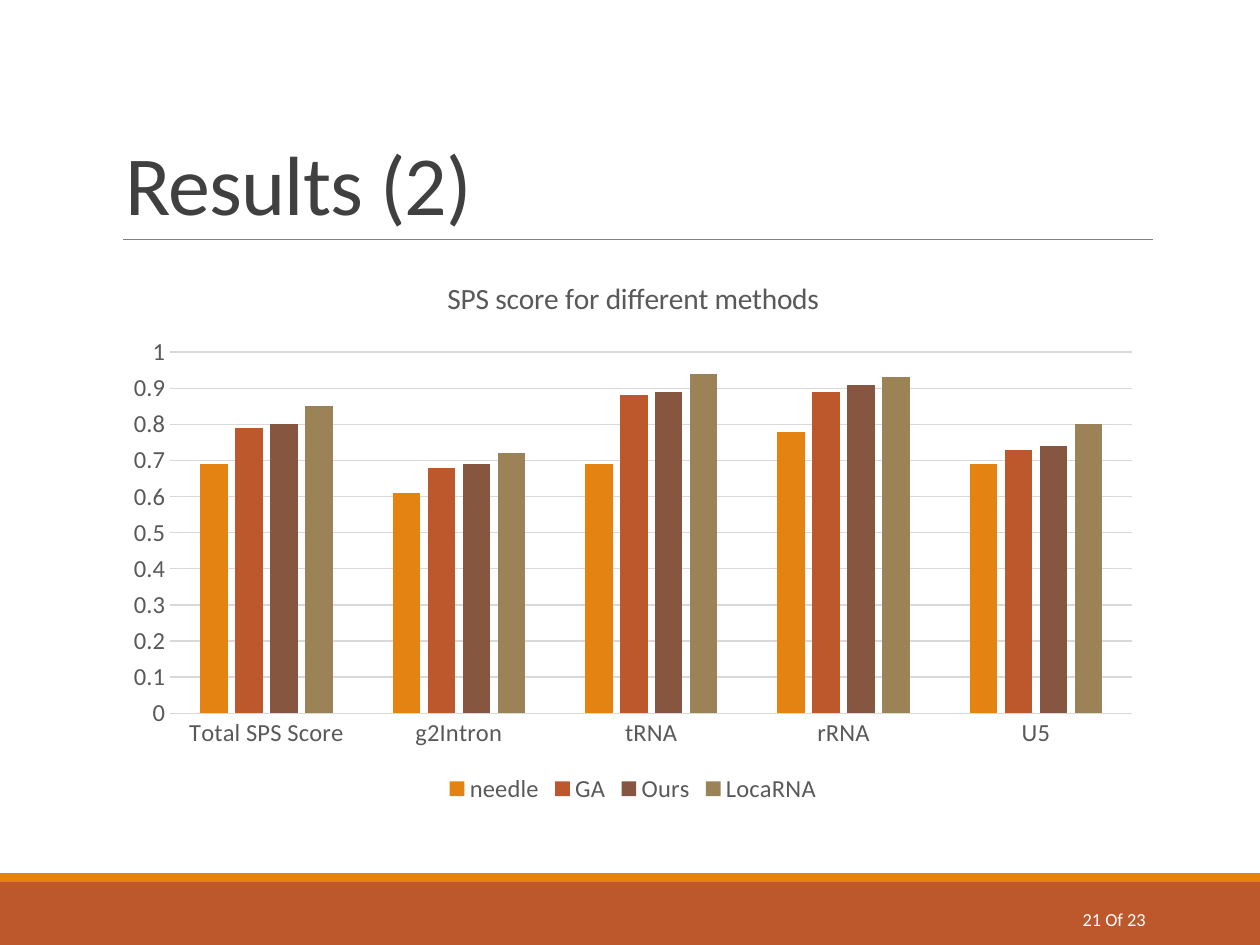
from dataclasses import dataclass, field

from lxml.etree import SubElement
from pptx import Presentation
from pptx.chart.data import CategoryChartData
from pptx.dml.color import RGBColor
from pptx.enum.chart import XL_CHART_TYPE, XL_LEGEND_POSITION, XL_TICK_MARK
from pptx.enum.shapes import MSO_CONNECTOR, MSO_SHAPE
from pptx.enum.text import MSO_ANCHOR, PP_ALIGN
from pptx.oxml.ns import qn
from pptx.util import Emu, Pt

PX_PER_INCH = 126
FONT = "Calibri"
COLORS = {
    "orange": "E48312",
    "rust": "BD582C",
    "brown": "865640",
    "khaki": "9B8357",
    "rule": "808080",
    "title": "404040",
    "label": "595959",
    "grid": "D9D9D9",
    "white": "FFFFFF",
}


@dataclass(frozen=True)
class Area:
    left: int
    top: int
    width: int
    height: int

    def emu(self) -> tuple:
        return tuple(px(n) for n in (self.left, self.top, self.width, self.height))


@dataclass(frozen=True)
class Band:
    area: Area
    color: str


@dataclass(frozen=True)
class Label:
    text: str
    area: Area
    size: float
    color: str
    tracking: int = 0
    frame_format: dict = field(default_factory=dict)
    para_format: dict = field(default_factory=dict)


@dataclass(frozen=True)
class Method:
    name: str
    color: str
    scores: tuple


BANDS = (
    Band(Area(0, 882, 1260, 63), "rust"),
    Band(Area(0, 873, 1260, 9), "orange"),
)
LABELS = (
    Label("21 Of 23", Area(1058, 902, 100, 35), 10.5, "white",
          frame_format={"vertical_anchor": MSO_ANCHOR.MIDDLE},
          para_format={"alignment": PP_ALIGN.RIGHT}),
    Label("Results (2)", Area(113, 39, 1040, 200), 48, "title", tracking=-50,
          frame_format={"vertical_anchor": MSO_ANCHOR.BOTTOM},
          para_format={"line_spacing": 0.85}),
)
CHART_AREA = Area(113, 255, 1040, 554)
CHART_TITLE = "SPS score for different methods"
FAMILIES = ("Total SPS Score", "g2Intron", "tRNA", "rRNA", "U5")
METHODS = (
    Method("needle", "orange", (0.69, 0.61, 0.69, 0.78, 0.69)),
    Method("GA", "rust", (0.79, 0.68, 0.88, 0.89, 0.73)),
    Method("Ours", "brown", (0.8, 0.69, 0.89, 0.91, 0.74)),
    Method("LocaRNA", "khaki", (0.85, 0.72, 0.94, 0.93, 0.8)),
)


def px(length: int) -> Emu:
    return Emu(round(length * 914400 / PX_PER_INCH))


def rgb(name: str) -> RGBColor:
    return RGBColor.from_string(COLORS[name])


def set_all(target, values: dict) -> None:
    for name, value in values.items():
        setattr(target, name, value)


def style_font(font, size: float, color: str) -> None:
    set_all(font, {"name": FONT, "size": Pt(size), "bold": False})
    font.color.rgb = rgb(color)


def style_line(line, width: float, color: str) -> None:
    line.width = Pt(width)
    line.color.rgb = rgb(color)


def draw_band(page, band: Band) -> None:
    shape = page.shapes.add_shape(MSO_SHAPE.RECTANGLE, *band.area.emu())
    shape.shadow.inherit = False
    shape.fill.solid()
    shape.fill.fore_color.rgb = rgb(band.color)
    shape.line.fill.background()


def draw_title_rule(page) -> None:
    rule = page.shapes.add_connector(
        MSO_CONNECTOR.STRAIGHT, px(123), px(239), px(1153), px(239))
    style_line(rule.line, 0.5, "rule")
    SubElement(rule._element.spPr, qn("a:effectLst"))


def draw_label(page, label: Label) -> None:
    frame = page.shapes.add_textbox(*label.area.emu()).text_frame
    set_all(frame, {"word_wrap": True, **label.frame_format})
    para = frame.paragraphs[0]
    set_all(para, label.para_format)
    span = para.add_run()
    span.text = label.text
    style_font(span.font, label.size, label.color)
    if label.tracking:
        span._r.get_or_add_rPr().set("spc", str(label.tracking))


def draw_score_chart(page) -> None:
    data = CategoryChartData()
    data.categories = FAMILIES
    for method in METHODS:
        data.add_series(method.name, method.scores)
    chart = page.shapes.add_chart(
        XL_CHART_TYPE.COLUMN_CLUSTERED, *CHART_AREA.emu(), data).chart
    style_font(chart.font, 14, "label")

    chart.has_title = True
    para = chart.chart_title.text_frame.paragraphs[0]
    span = para.add_run()
    span.text = CHART_TITLE
    style_font(span.font, 16.8, "label")
    chart.chart_title.include_in_layout = False

    chart.has_legend = True
    set_all(chart.legend, {"position": XL_LEGEND_POSITION.BOTTOM,
                           "include_in_layout": False})
    style_font(chart.legend.font, 14, "label")

    for axis in (chart.category_axis, chart.value_axis):
        set_all(axis, {"major_tick_mark": XL_TICK_MARK.NONE,
                       "minor_tick_mark": XL_TICK_MARK.NONE})
        style_font(axis.tick_labels.font, 14, "label")
    style_line(chart.category_axis.format.line, 0.75, "grid")
    scale = chart.value_axis
    set_all(scale, {"minimum_scale": 0, "maximum_scale": 1, "major_unit": 0.1})
    scale.format.line.fill.background()
    style_line(scale.major_gridlines.format.line, 0.75, "grid")

    plot = chart.plots[0]
    set_all(plot, {"gap_width": 219, "overlap": -27, "vary_by_categories": False})
    for series, method in zip(plot.series, METHODS):
        series.format.fill.solid()
        series.format.fill.fore_color.rgb = rgb(method.color)


def main() -> None:
    deck = Presentation()
    set_all(deck, {"slide_width": px(1260), "slide_height": px(945)})
    page = deck.slides.add_slide(deck.slide_layouts[6])
    for band in BANDS:
        draw_band(page, band)
    draw_title_rule(page)
    for label in LABELS:
        draw_label(page, label)
    draw_score_chart(page)
    deck.save("out.pptx")


if __name__ == "__main__":
    main()
